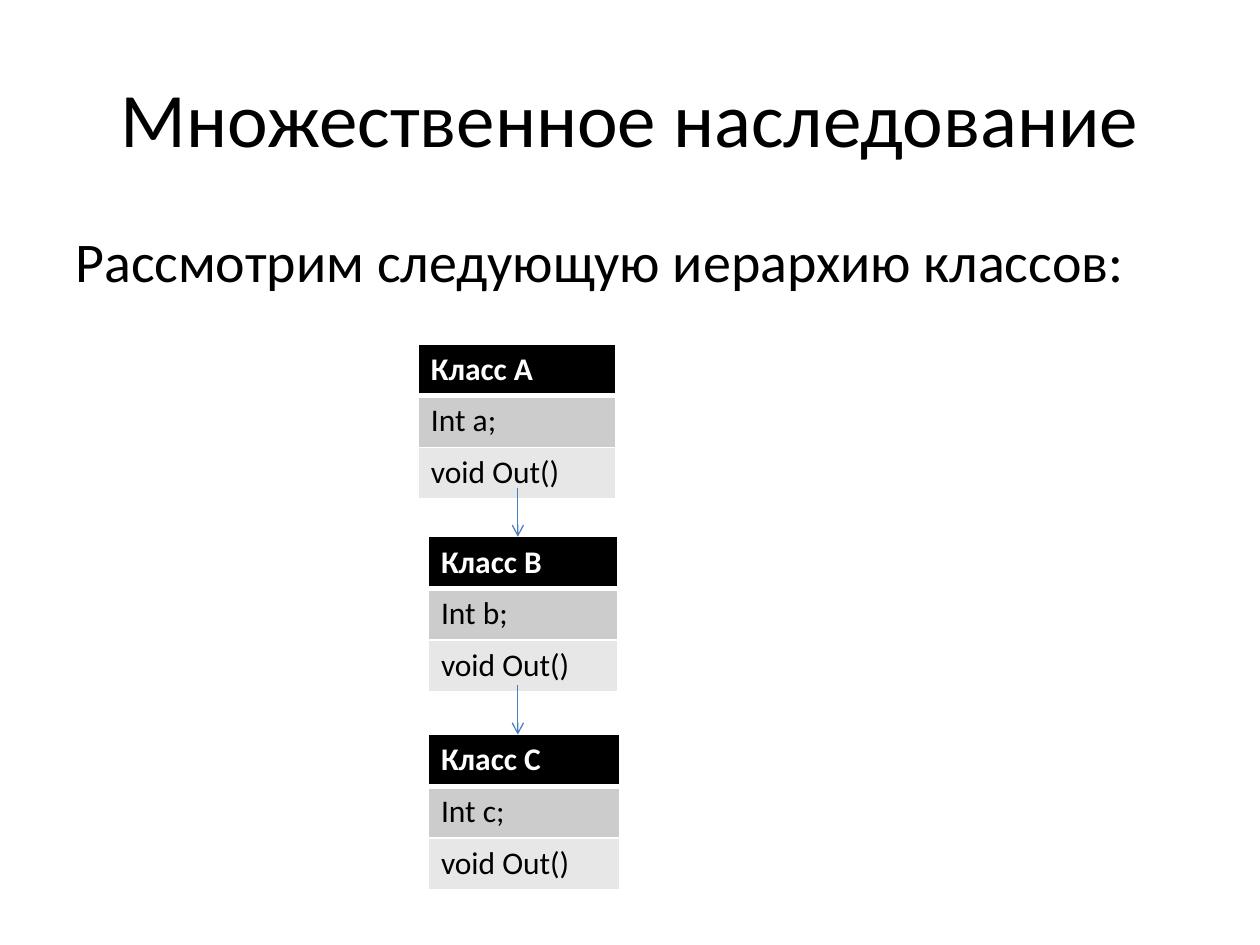
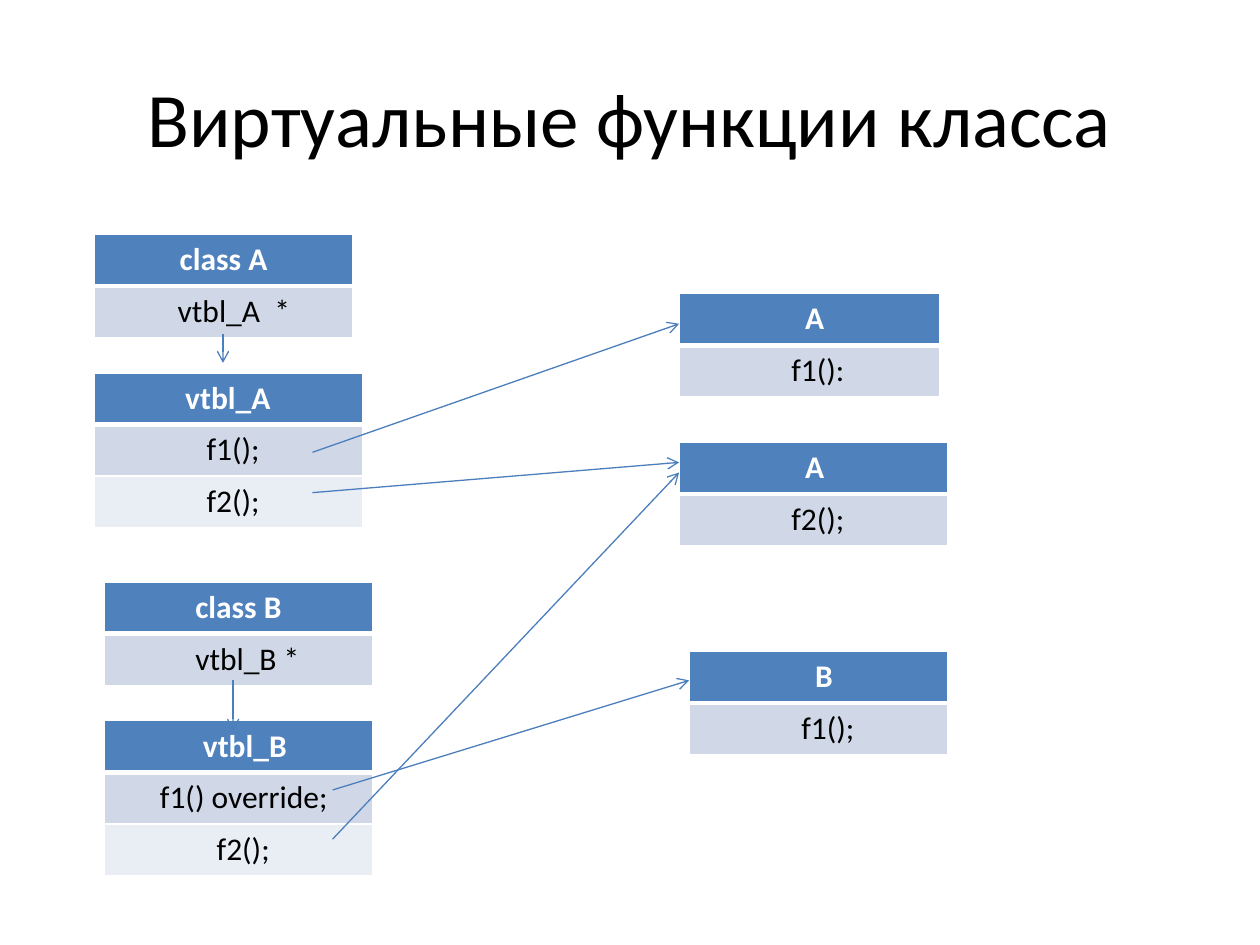
import dataclasses
import pptx
import pptx.dml.color
import pptx.enum.shapes
import pptx.enum.text
import pptx.oxml
import pptx.oxml.ns
import pptx.util
from pptx.util import Inches

FONT = "Calibri"
BLACK = "000000"
WHITE = "FFFFFF"
LINE = "4B7EBC"
GRAYS = (BLACK, "CCCCCC", "E7E7E7")
BLUES = ("4F81BD", "D0D8E8", "E9EDF4")
ROW = 0.41
PAD = 0.1
NS = pptx.oxml.ns.nsdecls("a")


@dataclasses.dataclass
class Entry:
    text: str
    inset: float = 0
    center: bool = False


@dataclasses.dataclass
class Box:
    left: float
    top: float
    width: float
    rows: list[Entry]


@dataclasses.dataclass
class Arrow:
    x1: float
    y1: float
    x2: float
    y2: float


def color(code: str) -> pptx.dml.color.RGBColor:
    return pptx.dml.color.RGBColor.from_string(code)


def write(para, text: str, size: float, code: str, bold: bool = False) -> None:
    run = para.add_run()
    run.text = text
    run.font.name = FONT
    run.font.size = pptx.util.Pt(size)
    run.font.bold = bold
    run.font.color.rgb = color(code)


def edge(cell, first: bool, second: bool) -> None:
    props = cell._tc.get_or_add_tcPr()
    widths = {"L": 1, "R": 1, "T": 3 if second else 1, "B": 3 if first else 1}
    for side, width in widths.items():
        props.append(pptx.oxml.parse_xml(
            f'<a:ln{side} {NS} w="{pptx.util.Pt(width)}"><a:solidFill>'
            f'<a:srgbClr val="{WHITE}"/></a:solidFill></a:ln{side}>'))


def draw_box(slide, box: Box, fills: tuple[str, ...]) -> None:
    count = len(box.rows)
    frame = slide.shapes.add_table(count, 1, Inches(box.left), Inches(box.top),
                                   Inches(box.width), Inches(ROW * count))
    for index, entry in enumerate(box.rows):
        head = index == 0
        cell = frame.table.cell(index, 0)
        edge(cell, head, index == 1)
        cell.fill.solid()
        cell.fill.fore_color.rgb = color(fills[index])
        cell.margin_left = Inches(PAD + entry.inset)
        para = cell.text_frame.paragraphs[0]
        if entry.center:
            para.alignment = pptx.enum.text.PP_ALIGN.CENTER
        write(para, entry.text, 18, WHITE if head else BLACK, head)


def draw_arrow(slide, arrow: Arrow) -> None:
    link = slide.shapes.add_connector(
        pptx.enum.shapes.MSO_CONNECTOR.STRAIGHT,
        Inches(arrow.x1), Inches(arrow.y1), Inches(arrow.x2), Inches(arrow.y2))
    link.line.color.rgb = color(LINE)
    link.line.width = pptx.util.Pt(0.75)
    link.line._get_or_add_ln().append(
        pptx.oxml.parse_xml(f'<a:tailEnd {NS} type="arrow"/>'))
    link._element.spPr.append(pptx.oxml.parse_xml(f"<a:effectLst {NS}/>"))


def add_slide(deck, text: str):
    slide = deck.slides.add_slide(deck.slide_layouts[5])
    title = slide.shapes.title
    title.left, title.top = Inches(0.5), Inches(0.3)
    title.width, title.height = Inches(9), Inches(1.25)
    frame = title.text_frame
    frame.vertical_anchor = pptx.enum.text.MSO_ANCHOR.MIDDLE
    para = frame.paragraphs[0]
    para.alignment = pptx.enum.text.PP_ALIGN.CENTER
    write(para, text, 44, BLACK)
    return slide


def draw_all(slide, boxes: list[Box], arrows: list[Arrow],
             fills: tuple[str, ...]) -> None:
    for box in boxes:
        draw_box(slide, box, fills)
    for arrow in arrows:
        draw_arrow(slide, arrow)


def add_tree(deck) -> None:
    slide = add_slide(deck, "Множественное наследование")
    body = slide.shapes.add_textbox(Inches(0.5), Inches(1.75), Inches(9), Inches(4.95))
    body.text_frame.word_wrap = True
    para = body.text_frame.paragraphs[0]
    para.space_before = pptx.util.Pt(6.4)
    write(para, "Рассмотрим следующую иерархию классов:", 32, BLACK)
    places = [("А", "a", 3.32, 2.73, 1.57),
              ("В", "b", 3.4, 4.26, 1.5),
              ("С", "c", 3.4, 5.83, 1.52)]
    boxes = [Box(left, top, width, [Entry(f"Класс {name}"), Entry(f"Int {field};"),
                                    Entry("void Out()")])
             for name, field, left, top, width in places]
    arrows = [Arrow(4.11, box.top - 0.39, 4.11, box.top) for box in boxes[1:]]
    draw_all(slide, boxes, arrows, GRAYS)


def add_links(deck) -> None:
    slide = add_slide(deck, "Виртуальные функции класса")
    boxes = [
        Box(0.75, 1.86, 2.05, [Entry("class A", center=True),
                               Entry("vtbl_A  *", 0.56)]),
        Box(0.75, 2.96, 2.13, [Entry("vtbl_A", 0.62), Entry("f1();", 0.79),
                               Entry("f2();", 0.79)]),
        Box(0.83, 4.62, 2.13, [Entry("class B", 0.62), Entry("vtbl_B *", 0.62)]),
        Box(0.83, 5.72, 2.13, [Entry("vtbl_B", 0.68), Entry("f1() override;", 0.34),
                               Entry("f2();", 0.79)]),
    ]
    bodies = [("A", "f1():", 5.39, 2.33, 2.07),
              ("A", "f2();", 5.39, 3.51, 2.13),
              ("B", "f1();", 5.47, 5.17, 2.05)]
    boxes += [Box(left, top, width, [Entry(name, 0.9), Entry(call, 0.79)])
              for name, call, left, top, width in bodies]
    arrows = [Arrow(1.77, 2.65, 1.77, 2.88),
              Arrow(1.85, 5.4, 1.85, 5.8),
              Arrow(2.48, 3.59, 5.39, 2.57),
              Arrow(2.48, 3.91, 5.39, 3.67),
              Arrow(2.64, 6.27, 5.47, 5.4),
              Arrow(2.64, 6.66, 5.39, 3.75)]
    draw_all(slide, boxes, arrows, BLUES)


def main() -> None:
    deck = pptx.Presentation()
    deck.slide_width, deck.slide_height = Inches(10), Inches(7.5)
    add_tree(deck)
    add_links(deck)
    deck.save("out.pptx")


if __name__ == "__main__":
    main()
